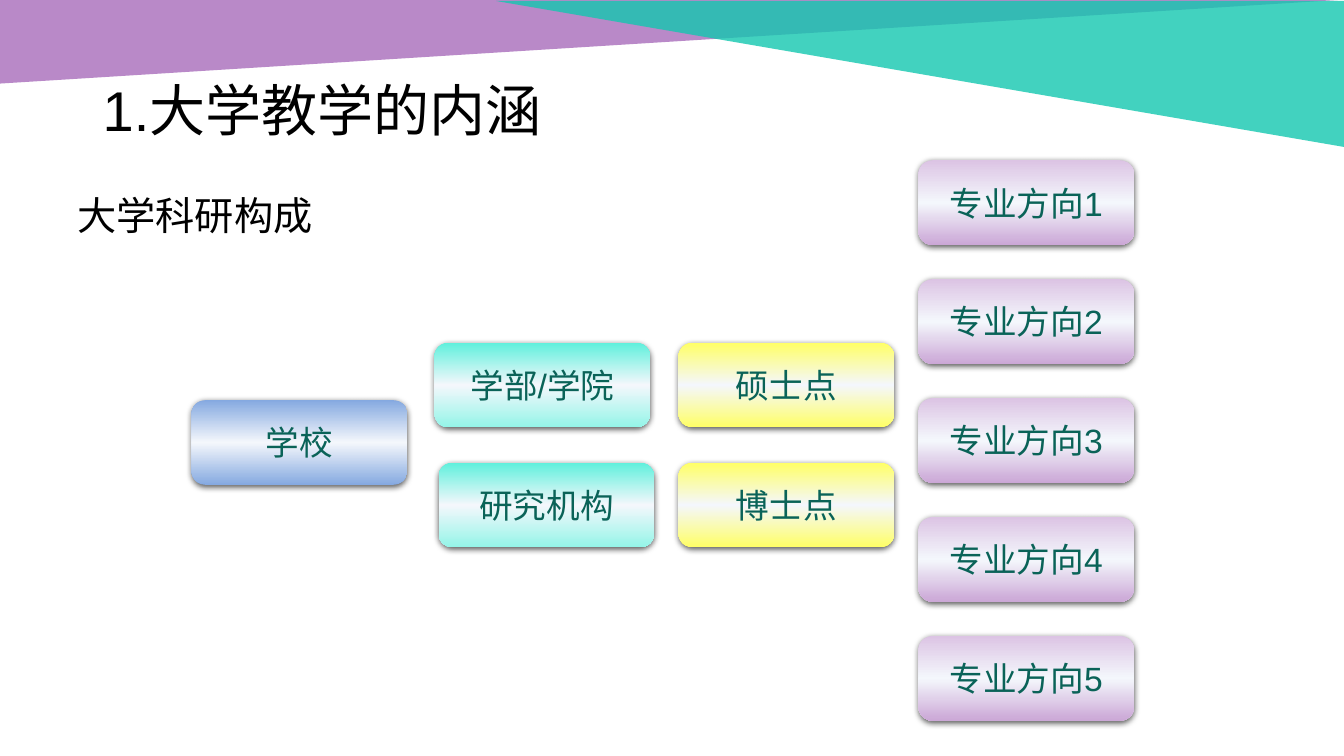
from dataclasses import dataclass

from lxml import etree
from pptx import Presentation
from pptx.dml.color import RGBColor
from pptx.enum.shapes import MSO_SHAPE
from pptx.enum.text import MSO_ANCHOR, PP_ALIGN
from pptx.oxml.ns import qn
from pptx.util import Inches, Pt

ROUND, WEDGE = MSO_SHAPE.ROUNDED_RECTANGLE, MSO_SHAPE.RIGHT_TRIANGLE
TOP, MIDDLE = MSO_ANCHOR.TOP, MSO_ANCHOR.MIDDLE
LEFT, CENTER, JUSTIFY = PP_ALIGN.LEFT, PP_ALIGN.CENTER, PP_ALIGN.JUSTIFY


@dataclass(frozen=True)
class Theme:
    latin: str = "Arial"
    cjk: str = "Noto Sans CJK SC"
    title: int = 40
    body: int = 28
    label: int = 24
    black: str = "000000"
    ink: str = "0A6358"
    purple: str = "A86CBB"
    teal: str = "13C7AF"
    shine: str = "F4F7FC"
    blue: tuple = ("85A9E0", "85A9E0")
    mint: tuple = ("5FF0DC", "94F5E8")
    yellow: tuple = ("FFFF66", "FFFF66")
    lilac: tuple = ("DCC4E4", "CBA7D6")


THEME = Theme()
BOX_W, BOX_H = 2.14, 0.84


def add_node(parent, tag, **attrs):
    node = etree.SubElement(parent, qn(tag))
    for key, value in attrs.items():
        node.set(key, str(value))
    return node


def add_color(parent, color, alpha):
    node = add_node(parent, "a:srgbClr", val=color)
    add_node(node, "a:alpha", val=alpha * 1000)


def write(frame, text, size, color, align, anchor, font=THEME.latin):
    frame.word_wrap = True
    frame.vertical_anchor = anchor
    para = frame.paragraphs[0]
    para.alignment = align
    run = para.add_run()
    run.text = text
    run.font.size = Pt(size)
    run.font.name = font
    run.font.color.rgb = RGBColor.from_string(color)
    add_node(run.font._element, "a:ea", typeface=THEME.cjk)
    return para


def add_wedge(slide, left, top, width, height, color, flips):
    wedge = slide.shapes.add_shape(
        WEDGE, Inches(left), Inches(top), Inches(width), Inches(height))
    wedge.shadow.inherit = False
    wedge.line.fill.background()
    wedge.fill.solid()
    wedge.fill.fore_color.rgb = RGBColor.from_string(color)
    tint = wedge._element.spPr.find(".//" + qn("a:srgbClr"))
    add_node(tint, "a:alpha", val=80000)
    for flip in flips:
        wedge._element.spPr.xfrm.set(flip, "1")


def add_text(slide, left, top, width, height, *style):
    area = slide.shapes.add_textbox(
        Inches(left), Inches(top), Inches(width), Inches(height))
    return write(area.text_frame, *style)


def add_box(slide, left, top, text, tones):
    """Add a glossy label: tones at both ends, a bright band between."""
    box = slide.shapes.add_shape(
        ROUND, Inches(left), Inches(top), Inches(BOX_W), Inches(BOX_H))
    box.line.fill.background()
    box.shadow.inherit = False
    box.fill.background()
    props = box._element.spPr
    grad = etree.Element(qn("a:gradFill"), rotWithShape="1")
    stops = add_node(grad, "a:gsLst")
    for pos, color in zip((0, 50, 100), (tones[0], THEME.shine, tones[1])):
        add_color(add_node(stops, "a:gs", pos=pos * 1000), color, 100)
    add_node(grad, "a:lin", ang=90 * 60000, scaled=0)
    props.replace(props.find(qn("a:noFill")), grad)
    shade = add_node(
        props.find(qn("a:effectLst")), "a:outerShdw", blurRad=Pt(4.5),
        dist=Pt(1.5), dir=90 * 60000, algn="ctr", rotWithShape=0)
    add_color(shade, THEME.black, 63)
    write(box.text_frame, text, THEME.label, THEME.ink, CENTER, MIDDLE)


def main():
    deck = Presentation()
    deck.slide_width, deck.slide_height = Inches(13.33), Inches(7.5)
    slide = deck.slides.add_slide(deck.slide_layouts[6])

    add_wedge(slide, 0, 0, 13.28, 0.83, THEME.purple, ["flipV"])
    add_wedge(slide, 4.92, 0.01, 8.42, 1.45, THEME.teal, ["flipH", "flipV"])
    add_text(slide, 0.67, 1.85, 12, 4.98, "大学科研构成",
             THEME.body, THEME.black, JUSTIFY, TOP, THEME.cjk)
    title = add_text(slide, 0.92, 0.4, 11.5, 1.45, "1.大学教学的内涵",
                     THEME.title, THEME.black, LEFT, MIDDLE)
    title.line_spacing = 0.9

    upper, lower = 3.4, 4.59
    boxes = [
        (1.9, 3.97, "学校", THEME.blue),
        (4.31, upper, "学部/学院", THEME.mint),
        (4.35, lower, "研究机构", THEME.mint),
        (6.73, upper, "硕士点", THEME.yellow),
        (6.73, lower, "博士点", THEME.yellow),
    ]
    boxes += [(9.11, 1.59 + 1.18 * row, f"专业方向{row + 1}", THEME.lilac)
              for row in range(5)]
    for box in boxes:
        add_box(slide, *box)

    deck.save("out.pptx")


if __name__ == "__main__":
    main()
